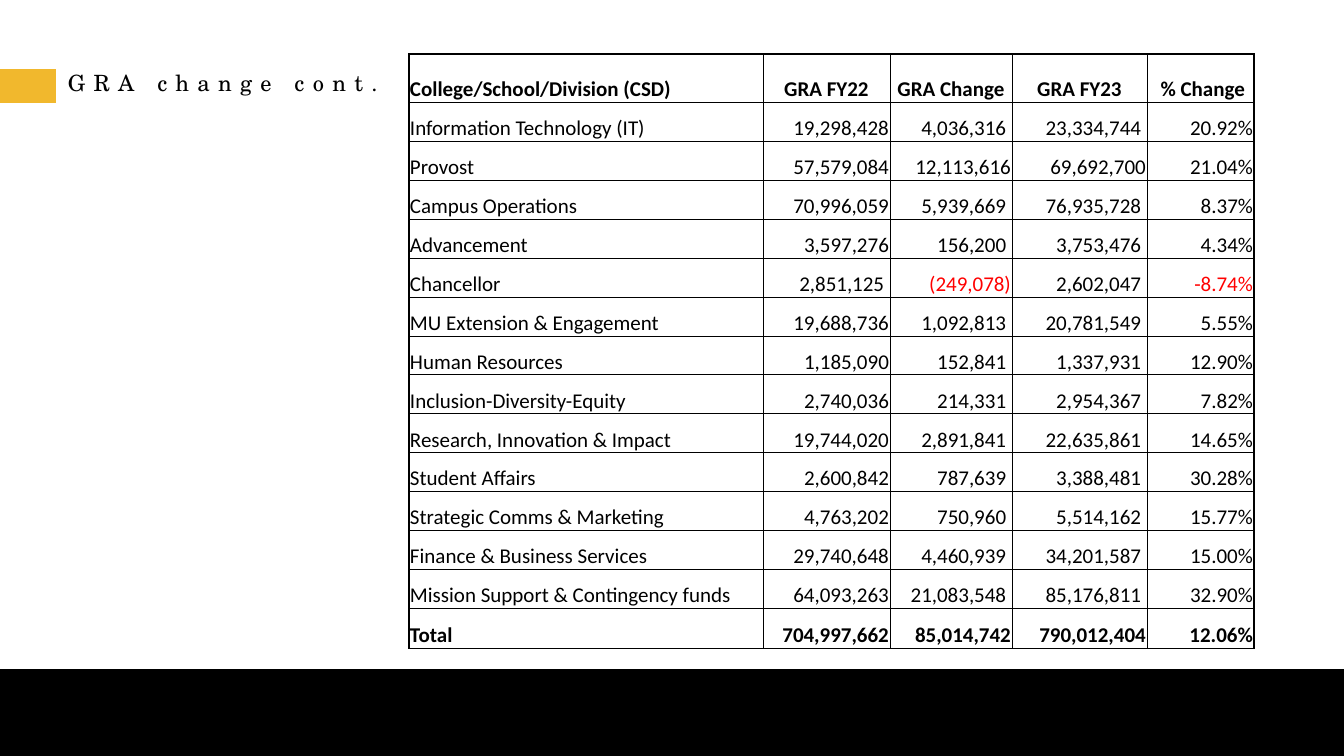
import pptx
import pptx.util
import pptx.dml.color
import pptx.enum.shapes
import pptx.enum.text
import pptx.oxml
import pptx.oxml.ns

PX = 914400 / 100.8
BLACK = pptx.dml.color.RGBColor(0x00, 0x00, 0x00)
GOLD = pptx.dml.color.RGBColor(0xF1, 0xB8, 0x2D)
RED = pptx.dml.color.RGBColor(0xFF, 0x00, 0x00)
ALIGN = pptx.enum.text.PP_ALIGN
ANCHOR = pptx.enum.text.MSO_ANCHOR

ROWS = [
    ["College/School/Division (CSD)", "GRA FY22", "GRA Change", "GRA FY23", " % Change"],
    ["Information Technology (IT)", "19,298,428", "4,036,316 ", "23,334,744 ", "20.92%"],
    ["Provost", "57,579,084", "12,113,616", "69,692,700", "21.04%"],
    ["Campus Operations", "70,996,059", "5,939,669 ", "76,935,728 ", "8.37%"],
    ["Advancement", "3,597,276", "156,200 ", "3,753,476 ", "4.34%"],
    ["Chancellor", "2,851,125 ", "(249,078)", "2,602,047 ", "-8.74%"],
    ["MU Extension & Engagement", "19,688,736", "1,092,813 ", "20,781,549 ", "5.55%"],
    ["Human Resources", "1,185,090", "152,841 ", "1,337,931 ", "12.90%"],
    ["Inclusion-Diversity-Equity", "2,740,036", "214,331 ", "2,954,367 ", "7.82%"],
    ["Research, Innovation & Impact", "19,744,020", "2,891,841 ", "22,635,861 ", "14.65%"],
    ["Student Affairs", "2,600,842", "787,639 ", "3,388,481 ", "30.28%"],
    ["Strategic Comms & Marketing", "4,763,202", "750,960 ", "5,514,162 ", "15.77%"],
    ["Finance & Business Services", "29,740,648", "4,460,939 ", "34,201,587 ", "15.00%"],
    ["Mission Support & Contingency funds", "64,093,263", "21,083,548 ", "85,176,811 ", "32.90%"],
    ["Total", "704,997,662", "85,014,742", "790,012,404", "12.06%"],
]
COL_WIDTHS = [354, 127, 122, 135, 107]
ROW_HEIGHTS = [48] + [39] * 13 + [40]


def px(*lengths):
    return [pptx.util.Emu(round(n * PX)) for n in lengths]


def set_attrs(obj, values):
    for name, value in values.items():
        setattr(obj, name, value)


prs = pptx.Presentation()
prs.slide_width, prs.slide_height = px(1344, 756)
s = prs.slides.add_slide(prs.slide_layouts[6])

for box, color, outlined in [((0, 670, 1344, 86), BLACK, True), ((0, 69, 56, 34), GOLD, False)]:
    sp = s.shapes.add_shape(pptx.enum.shapes.MSO_SHAPE.RECTANGLE, *px(*box))
    sp.shadow.inherit = False
    sp.fill.solid()
    sp.fill.fore_color.rgb = color
    if outlined:
        sp.line.color.rgb = color
        sp.line.width = pptx.util.Pt(1)
    else:
        sp.line.fill.background()

tf = s.shapes.add_textbox(*px(58, 67, 365, 34)).text_frame
set_attrs(tf, {"word_wrap": True, "vertical_anchor": ANCHOR.MIDDLE})
p = tf.paragraphs[0]
p.line_spacing = 0.9
r = p.add_run()
r.text = "GRA change cont."
set_attrs(r.font, {"name": "TeX Gyre Schola", "size": pptx.util.Pt(16)})
r.font.color.rgb = BLACK
r.font._element.set("spc", "600")

last_row, last_col = len(ROWS) - 1, len(COL_WIDTHS) - 1
frame = px(409, 54, sum(COL_WIDTHS), sum(ROW_HEIGHTS))
table = s.shapes.add_table(len(ROWS), len(COL_WIDTHS), *frame).table
set_attrs(table, {"first_row": False, "horz_banding": False})
for column, width in zip(table.columns, px(*COL_WIDTHS)):
    column.width = width
for row, height in zip(table.rows, px(*ROW_HEIGHTS)):
    row.height = height

inset, = px(1)
cell_format = {
    "margin_left": inset, "margin_right": inset, "margin_top": inset,
    "margin_bottom": 0, "vertical_anchor": ANCHOR.BOTTOM,
}
for i, values in enumerate(ROWS):
    for j, value in enumerate(values):
        cell = table.cell(i, j)
        set_attrs(cell, cell_format)
        cell.fill.background()
        p = cell.text_frame.paragraphs[0]
        p.alignment = ALIGN.LEFT if j == 0 else ALIGN.CENTER if i == 0 else ALIGN.RIGHT
        r = p.add_run()
        r.text = value
        set_attrs(r.font, {"name": "Calibri", "size": pptx.util.Pt(15), "bold": i in (0, last_row)})
        r.font.color.rgb = RED if value[0] in "(-" else BLACK
        edges = {"lnL": j == 0, "lnR": j == last_col, "lnT": i == 0, "lnB": i == last_row}
        tcPr = cell._tc.get_or_add_tcPr()
        for k, (tag, outer) in enumerate(edges.items()):
            tcPr.insert(k, pptx.oxml.parse_xml(
                f'<a:{tag} {pptx.oxml.ns.nsdecls("a")} w="{12700 if outer else 6350}">'
                f'<a:solidFill><a:srgbClr val="{BLACK}"/></a:solidFill></a:{tag}>'))

prs.save("out.pptx")
